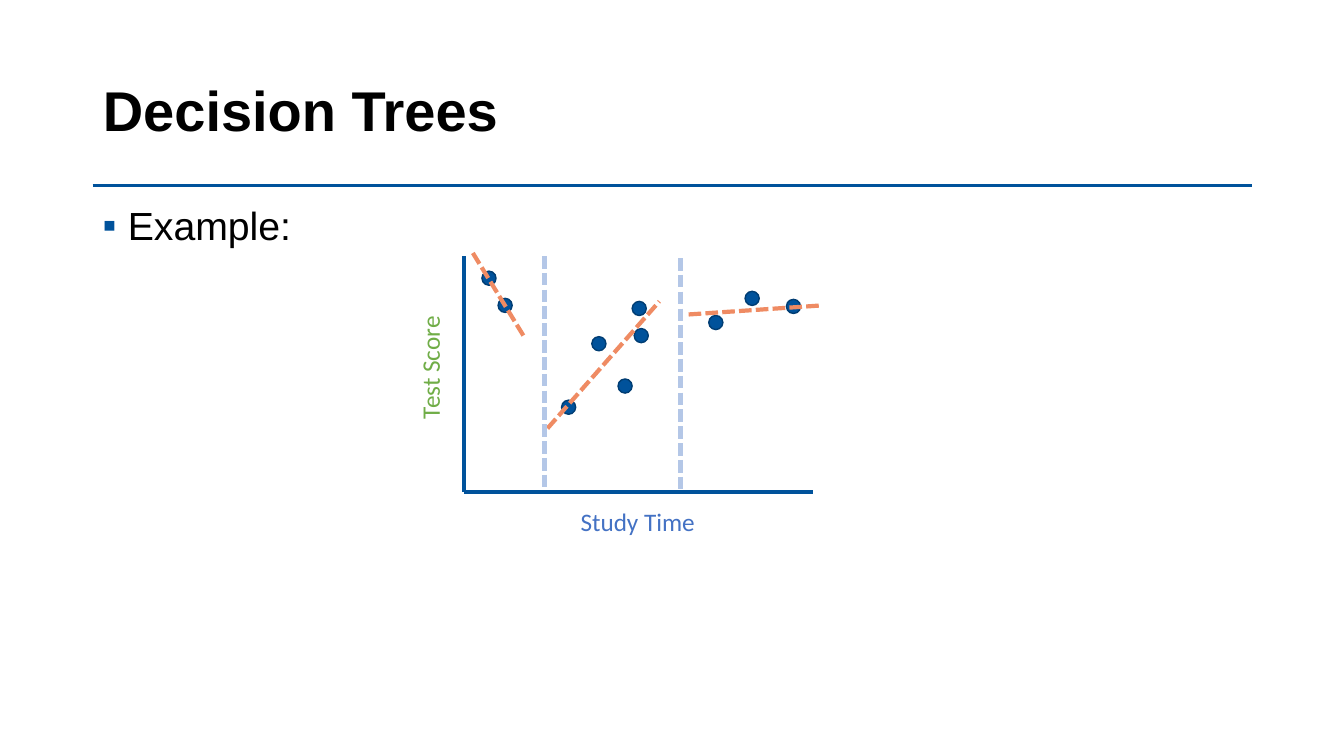
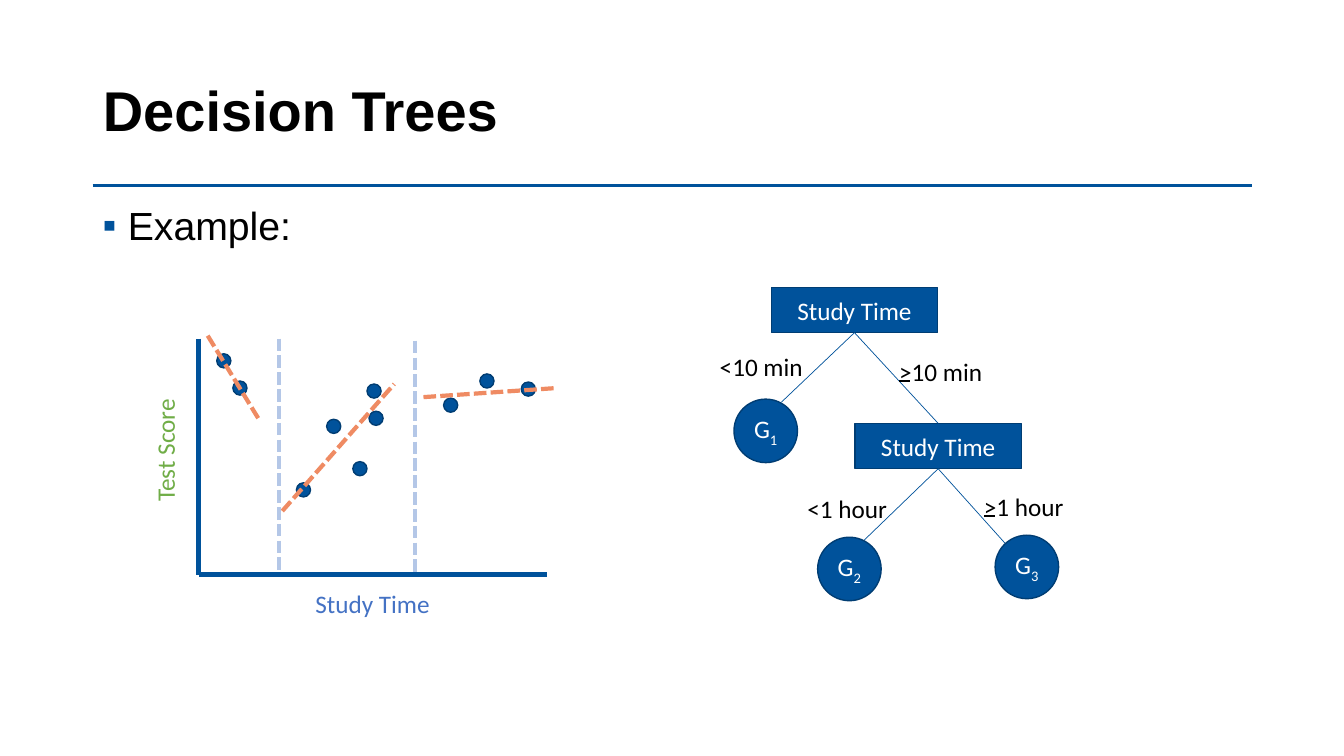
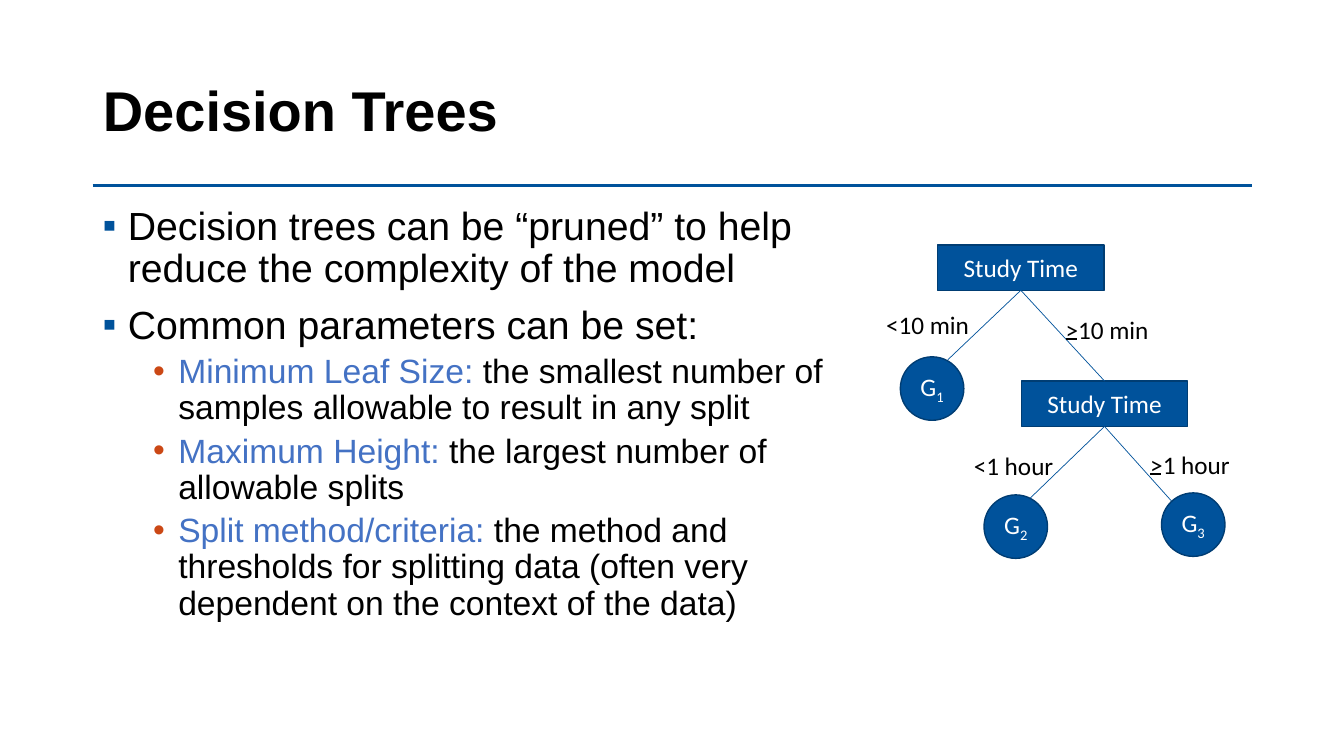
from pptx import Presentation
from pptx import util as u
from pptx.dml.color import RGBColor
from pptx.enum import dml, shapes, text
from pptx.oxml import ns
from lxml import etree

BLUE, EDGE, ACCENT = "00529B", "003D73", "4472C4"
GREEN, CORAL, PALE, RUST = "70AD47", "EF8B63", "B4C7E7", "CB4815"
BLACK, WHITE = "000000", "FFFFFF"
RECT, OVAL = shapes.MSO_SHAPE.RECTANGLE, shapes.MSO_SHAPE.OVAL


def color(code):
    return RGBColor.from_string(code)


def inches(*sizes):
    return [u.Inches(size) for size in sizes]


def add_bullet(par, mark, tint, margin):
    props = par._p.get_or_add_pPr()
    props.set("marL", str(u.Inches(margin)))
    props.set("indent", str(u.Inches(-0.25)))
    paint = etree.SubElement(props, ns.qn("a:buClr"))
    etree.SubElement(paint, ns.qn("a:srgbClr"), val=tint)
    etree.SubElement(props, ns.qn("a:buFont"), typeface="Arial")
    etree.SubElement(props, ns.qn("a:buChar"), char=mark)


def write(par, words, size=18, face="Calibri", tint=BLACK, bold=False,
          align=None, space=None, before=None, sub=False):
    run = par.add_run()
    run.text = words
    run.font.size = u.Pt(size)
    run.font.name = face
    run.font.bold = bold
    run.font.color.rgb = color(tint)
    if sub:
        run._r.get_or_add_rPr().set("baseline", "-25000")
    if align is not None:
        par.alignment = align
    if space:
        par.line_spacing = space
    if before:
        par.space_before = u.Pt(before)


class Deck:
    def __init__(self):
        self.show = Presentation()
        self.show.slide_width, self.show.slide_height = inches(13.33, 7.5)

    def start(self, words):
        self.slide = self.show.slides.add_slide(self.show.slide_layouts[5])
        self.line((0.92, 1.84), (12.42, 1.84), BLUE, 2)
        title = self.slide.shapes.title
        title.left, title.top, title.width, title.height = inches(0.92, 0.4, 11.5, 1.45)
        frame = title.text_frame
        frame.auto_size = text.MSO_AUTO_SIZE.NONE
        frame.vertical_anchor = text.MSO_ANCHOR.MIDDLE
        write(frame.paragraphs[0], words, size=40, face="Arial", bold=True,
              align=text.PP_ALIGN.LEFT, space=0.9)

    def line(self, start, end, tint, width, dash=False):
        link = self.slide.shapes.add_connector(
            shapes.MSO_CONNECTOR.STRAIGHT, *inches(*start, *end))
        link.line.color.rgb = color(tint)
        link.line.width = u.Pt(width)
        if dash:
            link.line.dash_style = dml.MSO_LINE.SQUARE_DOT
        etree.SubElement(link._element.spPr, ns.qn("a:effectLst"))
        return link

    def shape(self, kind, x, y, width, height, words="", sub=""):
        item = self.slide.shapes.add_shape(kind, *inches(x, y, width, height))
        item.shadow.inherit = False
        item.fill.solid()
        item.fill.fore_color.rgb = color(BLUE)
        item.line.color.rgb = color(EDGE)
        item.line.width = u.Pt(1)
        item.text_frame.vertical_anchor = text.MSO_ANCHOR.MIDDLE
        par = item.text_frame.paragraphs[0]
        if words:
            write(par, words, tint=WHITE, align=text.PP_ALIGN.CENTER)
        if sub:
            write(par, sub, tint=WHITE, sub=True)
        return item

    def label(self, words, x, y, width, tint=BLACK, turn=0):
        box = self.slide.shapes.add_textbox(*inches(x, y, width, 0.4))
        box.rotation = turn
        box.text_frame.word_wrap = False
        box.text_frame.auto_size = text.MSO_AUTO_SIZE.SHAPE_TO_FIT_TEXT
        write(box.text_frame.paragraphs[0], words, tint=tint)

    def body(self, items, width=11.66):
        box = self.slide.shapes.add_textbox(*inches(0.92, 2, width, 4.4))
        frame = box.text_frame
        frame.word_wrap = True
        for index, (term, words) in enumerate(items):
            par = frame.add_paragraph() if index else frame.paragraphs[0]
            if term:
                add_bullet(par, "•", RUST, 0.75)
                par.level = 1
                write(par, term, size=24, face="Arial", tint=ACCENT)
            else:
                add_bullet(par, "▪", BLUE, 0.25)
            write(par, words, size=24 if term else 28, face="Arial", space=0.9,
                  before=(5 if term else 10) if index else None)

    def plot(self, left, top):
        def at(x, y):
            return left + x, top + y

        self.line(at(0, 0), at(0, 2.34), BLUE, 3)
        self.line(at(0, 2.34), at(3.46, 2.34), BLUE, 3)
        self.label("Study Time", *at(1.06, 2.43), 1.35, ACCENT)
        self.label("Test Score", *at(-0.95, 0.9), 1.23, GREEN, 270)
        dots = [(0.34, 0.42), (0.97, 1.43), (0.18, 0.15), (2.79, 0.35),
                (2.43, 0.59), (1.53, 1.22), (3.2, 0.43), (1.27, 0.8),
                (1.67, 0.45), (1.69, 0.72)]
        for dot in dots:
            self.shape(OVAL, *at(*dot), 0.14, 0.14)
        trends = [((0.09, -0.03), (0.61, 0.82)), ((0.83, 1.71), (1.94, 0.45)),
                  ((2.23, 0.58), (3.55, 0.49))]
        for start, end in trends:
            self.line(at(*start), at(*end), CORAL, 3, dash=True)
        for x, y in [(0.8, 0), (2.15, 0.02)]:
            self.line(at(x, y), at(x, y + 2.31), PALE, 3, dash=True)

    def tree(self, left, top):
        def at(x, y):
            return left + x, top + y

        root, child = [self.shape(RECT, *at(*spot), 1.65, 0.45, "Study Time")
                       for spot in [(0, 0), (0.83, 1.35)]]
        for node, x, y in [(root, 0.83, 0.45), (child, 1.65, 1.82)]:
            for dx, dy in [(0.83, 0.9), (-0.73, 0.69)]:
                link = self.line(at(x, y), at(x + dx, y + dy), BLUE, 0.5)
                link.begin_connect(node, 2)
                if node is root and dx > 0:
                    link.end_connect(child, 0)
        leaves = [("1", -0.37, 1.11), ("2", 0.46, 2.48), ("3", 2.22, 2.46)]
        for number, x, y in leaves:
            self.shape(OVAL, *at(x, y), 0.63, 0.63, "G", number)
        splits = [("10 min", 1.03, (-0.61, 0.59), (1.17, 0.64)),
                  ("1 hour", 1, (0.26, 1.99), (2.01, 1.98))]
        for limit, width, less, more in splits:
            self.label("<" + limit, *at(*less), width)
            self.label(">" + limit, *at(*more), width)
            x, y = at(*more)
            self.line((x + 0.1, y + 0.29), (x + 0.21, y + 0.29), BLACK, 1.5)


def main():
    deck = Deck()
    title = "Decision Trees"
    example = [("", "Example:")]

    deck.start(title)
    deck.body(example)
    deck.plot(4.6, 2.54)

    deck.start(title)
    deck.body(example)
    deck.plot(1.97, 3.36)
    deck.tree(7.65, 2.85)

    deck.start(title)
    deck.body([
        ("", "Decision trees can be “pruned” to help reduce the complexity of the model"),
        ("", "Common parameters can be set:"),
        ("Minimum Leaf Size: ",
         "the smallest number of samples allowable to result in any split"),
        ("Maximum Height: ", "the largest number of allowable splits"),
        ("Split method/criteria: ",
         "the method and thresholds for splitting data "
         "(often very dependent on the context of the data)"),
    ], 7.72)
    deck.tree(9.3, 2.43)
    deck.show.save("out.pptx")


if __name__ == "__main__":
    main()
